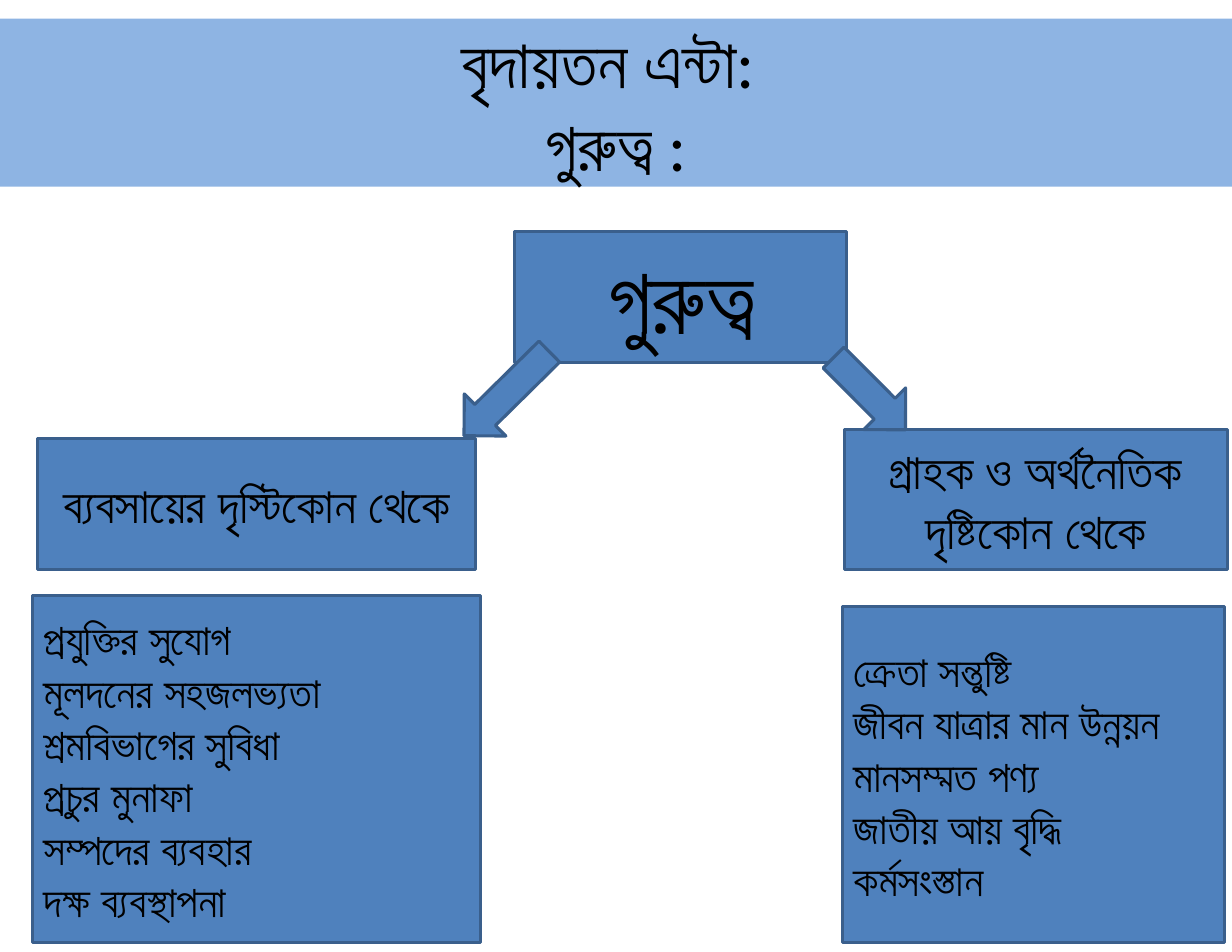
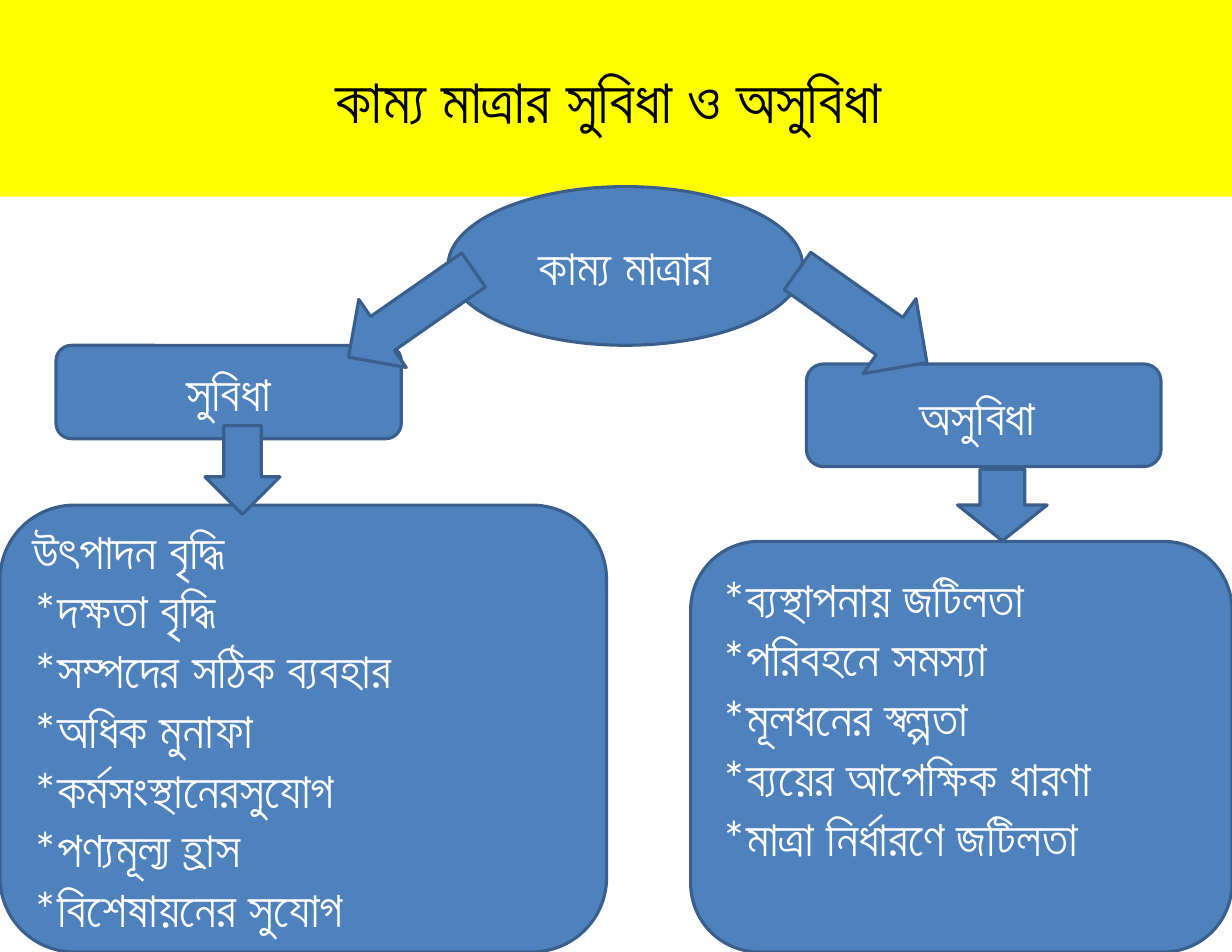
import pptx
import pptx.dml.color
import pptx.enum.shapes
import pptx.enum.text
import pptx.util

Pt = pptx.util.Pt
Shape = pptx.enum.shapes.MSO_SHAPE
Align = pptx.enum.text.PP_ALIGN

FONT = "Calibri"
BLUE, OUTLINE = "4F81BD", "3A5F8C"
PALE_BLUE, YELLOW = "8EB4E3", "FFFF00"
BLACK, WHITE = "000000", "FFFFFF"


def color(value):
    return pptx.dml.color.RGBColor.from_string(value)


def write(shape, text, *, size, ink, align=Align.CENTER,
          inset=(7.2, 3.6, 7.2, 3.6)):
    """Fill a shape with one paragraph per line of text."""
    frame = shape.text_frame
    frame.word_wrap = True
    frame.vertical_anchor = pptx.enum.text.MSO_ANCHOR.MIDDLE
    (frame.margin_left, frame.margin_top,
     frame.margin_right, frame.margin_bottom) = map(Pt, inset)
    for index, line in enumerate(text.split("\n")):
        para = frame.add_paragraph() if index else frame.paragraphs[0]
        para.alignment = align
        span = para.add_run()
        span.text = line
        span.font.name = FONT
        span.font.size = Pt(size)
        span.font.color.rgb = color(ink)


def add_box(page, kind, place, *, fill=BLUE, outline=OUTLINE, rotation=0):
    """Draw a preset shape at (left, top, width, height) in points."""
    box = page.shapes.add_shape(kind, *map(Pt, place))
    box.shadow.inherit = False
    box.rotation = rotation
    box.fill.solid()
    box.fill.fore_color.rgb = color(fill)
    if outline:
        box.line.color.rgb = color(outline)
        box.line.width = Pt(2)
    else:
        box.line.fill.background()
    return box


def add_title(page, text, top, height, fill, size):
    band = add_box(page, Shape.RECTANGLE, (0, top, 792, height),
                   fill=fill, outline=None)
    write(band, text, size=size, ink=BLACK, inset=(13, 6.5, 13, 6.5))


def add_label(page, kind, place, text, **style):
    write(add_box(page, kind, place), text, **style)


def add_list(page, kind, place, items, **style):
    add_label(page, kind, place, "\n".join(items), align=Align.LEFT, **style)


def build_importance(page):
    add_title(page, "বৃদায়তন এন্টা: \nগুরুত্ব :", 12, 108, PALE_BLUE, 44)
    for place, text, size in (
        ((24, 282, 282, 84), "ব্যবসায়ের দৃস্টিকোন থেকে", 32),
        ((543, 276, 246, 90), "গ্রাহক ও অর্থনৈতিক দৃষ্টিকোন থেকে", 32),
        ((330.5, 149, 214, 84), "গুরুত্ব", 60),
    ):
        add_label(page, Shape.RECTANGLE, place, text, size=size, ink=BLACK)

    add_box(page, Shape.DOWN_ARROW, (306.7, 214.6, 38, 77), rotation=45.4)
    add_box(page, Shape.DOWN_ARROW, (540, 220.3, 38, 65.5), rotation=315.1)

    business = ("প্রযুক্তির সুযোগ", "মূলদনের সহজলভ্যতা", "শ্রমবিভাগের সুবিধা",
                "প্রচুর মুনাফা", "সম্পদের ব্যবহার", "দক্ষ ব্যবস্থাপনা")
    customer = ("ক্রেতা সন্তুষ্টি", "জীবন যাত্রার মান উন্নয়ন", "মানসম্মত পণ্য",
                "জাতীয় আয় বৃদ্ধি", "কর্মসংস্তান")
    for place, items in (((21, 383, 288, 223), business),
                         ((541.5, 390, 246, 216), customer)):
        add_list(page, Shape.RECTANGLE, place, items, size=28, ink=BLACK)


def build_optimum_scale(page):
    style = {"size": 32, "ink": WHITE}
    add_title(page, "কাম্য মাত্রার সুবিধা ও অসুবিধা ", 0, 126.5, YELLOW, 40)
    for kind, place, text in (
        (Shape.OVAL, (288, 120, 228, 102), "কাম্য মাত্রার"),
        (Shape.ROUNDED_RECTANGLE, (36, 222, 222, 60), "সুবিধা"),
        (Shape.ROUNDED_RECTANGLE, (518.4, 234, 228, 66), "অসুবিধা "),
    ):
        add_label(page, kind, place, text, **style)

    add_box(page, Shape.RIGHT_ARROW, (503.3, 174.2, 102, 59), rotation=35.3)
    add_box(page, Shape.DOWN_ARROW, (237.6, 152.6, 53.3, 98), rotation=55.1)

    advantages = ("উৎপাদন বৃদ্ধি", "*দক্ষতা বৃদ্ধি", "*সম্পদের সঠিক ব্যবহার",
                  "*অধিক মুনাফা", "*কর্মসংস্থানেরসুযোগ", "*পণ্যমূল্য হ্রাস",
                  "*বিশেষায়নের সুযোগ")
    drawbacks = ("*ব্যস্থাপনায় জটিলতা", "*পরিবহনে সমস্যা", "*মূলধনের স্বল্পতা",
                 "*ব্যয়ের আপেক্ষিক ধারণা", "*মাত্রা নির্ধারণে জটিলতা")
    add_list(page, Shape.ROUNDED_RECTANGLE, (0, 324.7, 390, 287.3),
             advantages, **style)
    add_list(page, Shape.ROUNDED_RECTANGLE, (444, 348, 348, 264),
             drawbacks, inset=(7.2, 3.6, 7.2, 42), **style)

    for place in ((131.8, 273.6, 48.2, 57), (615.6, 301.7, 57.6, 46)):
        add_box(page, Shape.DOWN_ARROW, place)


def main():
    deck = pptx.Presentation()
    deck.slide_width, deck.slide_height = Pt(792), Pt(612)
    for build in (build_importance, build_optimum_scale):
        build(deck.slides.add_slide(deck.slide_layouts[6]))
    deck.save("out.pptx")


if __name__ == "__main__":
    main()
